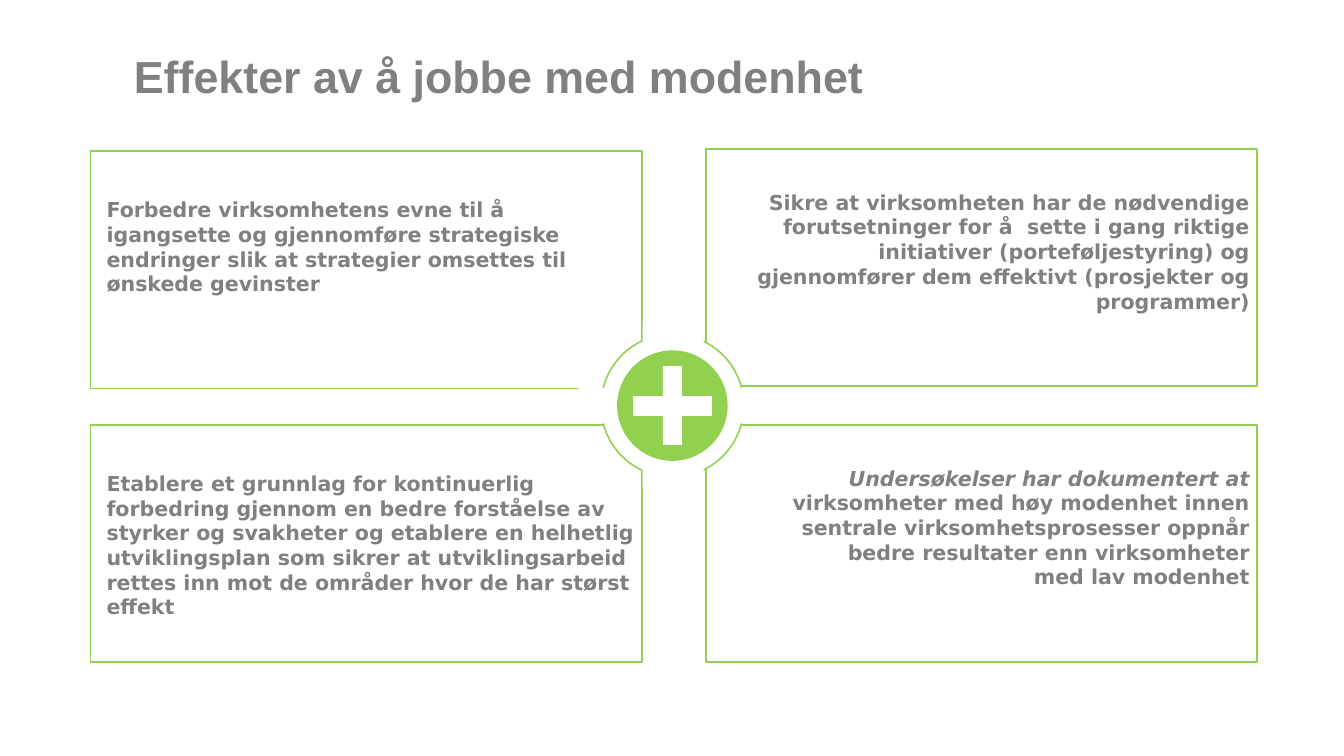
from pptx import Presentation
from pptx.dml.color import RGBColor
from pptx.enum.shapes import MSO_SHAPE
from pptx.enum.text import MSO_ANCHOR, PP_ALIGN
from pptx.util import Emu, Pt

RECT, OVAL = MSO_SHAPE.RECTANGLE, MSO_SHAPE.OVAL
LEFT, RIGHT = PP_ALIGN.LEFT, PP_ALIGN.RIGHT
TOP, BOTTOM = MSO_ANCHOR.TOP, MSO_ANCHOR.BOTTOM
SCALE = 9144  # EMU per px, 100 px to the inch
HEX = {"white": "FFFFFF", "green": "92D050", "grey": "808080"}
HEAD = {"name": "Arial", "size": Pt(42.7), "bold": True}
BODY = {"name": "DejaVu Sans", "size": Pt(19.6), "bold": True}

# Left, top, side, insets and runs of text with their italic flag
CARDS = [
    (120, 200, LEFT, (21, 61, 10, 5), [
        ("Forbedre virksomhetens evne til å igangsette og gjennomføre "
         "strategiske endringer slik at strategier omsettes til ønskede "
         "gevinster", False)]),
    (934, 197, RIGHT, (21, 54, 10, 14), [
        ("Sikre at virksomheten har de nødvendige forutsetninger for å  sette "
         "i gang riktige initiativer (porteføljestyring) og gjennomfører dem "
         "effektivt (prosjekter og programmer)", False)]),
    (120, 562, LEFT, (21, 61, 10, 5), [
        ("Etablere et grunnlag for kontinuerlig forbedring gjennom en bedre "
         "forståelse av styrker og svakheter og etablere en helhetlig "
         "utviklingsplan som sikrer at utviklingsarbeid rettes inn mot de "
         "områder hvor de har størst effekt", False)]),
    (934, 562, RIGHT, (112, 54, 10, 14), [
        ("Undersøkelser har dokumentert at", True),
        (" virksomheter med høy modenhet innen sentrale virksomhetsprosesser "
         "oppnår bedre resultater enn virksomheter med lav modenhet", False)]),
]


def px(*nums):
    return [Emu(round(num * SCALE)) for num in nums]


def tint(name):
    return RGBColor.from_string(HEX[name])


def draw(shapes, kind, box, fill, line=None, width=1.5):
    shape = shapes.add_shape(kind, *px(*box))
    shape.shadow.inherit = False
    shape.fill.solid()
    shape.fill.fore_color.rgb = tint(fill)
    if line:
        shape.line.color.rgb = tint(line)
        shape.line.width = Pt(width)
    else:
        shape.line.fill.background()
    return shape


def write(shape, runs, font, insets, anchor, para):
    """Fill a shape with one paragraph of (text, italic) runs."""
    frame = shape.text_frame
    frame.word_wrap = True
    frame.vertical_anchor = anchor
    for side, gap in zip(("left", "top", "right", "bottom"), px(*insets)):
        setattr(frame, f"margin_{side}", gap)
    first = frame.paragraphs[0]
    for key, value in para.items():
        setattr(first, key, value)
    for text, slant in runs:
        run = first.add_run()
        run.text = text
        for key, value in {**font, "italic": slant}.items():
            setattr(run.font, key, value)
        run.font.color.rgb = tint("grey")


def add_title(slide, box):
    shape = slide.shapes.add_textbox(*px(*box))
    write(shape, [("Effekter av å jobbe med modenhet", False)], HEAD,
          (0, 0, 0, 0), BOTTOM, {"alignment": LEFT, "line_spacing": 0.9})


def add_card(slide, box, side, insets, runs):
    shape = draw(slide.shapes, RECT, box, "white", "green")
    write(shape, runs, BODY, insets, TOP,
          {"alignment": side, "space_after": Pt(5.3)})


def add_plus(slide, box):
    """Ringed plus sign, with white masks that open the ring on each side."""
    left, top, wide, high = box
    mid_x, mid_y = left + wide / 2, top + high / 2
    shapes = slide.shapes.add_group_shape().shapes

    def centre(kind, w, h, *style, dx=0, dy=0):
        spot = (mid_x + dx - w / 2, mid_y + dy - h / 2, w, h)
        draw(shapes, kind, spot, *style)

    centre(OVAL, wide, high, "white", "green")
    centre(OVAL, 142, 142, "green", "green", 3)
    for w, h in ((104, 25), (25, 104)):
        centre(RECT, w, h, "white", "white", 0.75)
    for sign in (-1, 1):
        centre(RECT, 43, 47, "white", dx=sign * 102)
        centre(RECT, 81, 32, "white", dx=1, dy=sign * 95)


def main():
    deck = Presentation()
    deck.slide_width, deck.slide_height = px(1778, 1000)
    slide = deck.slides.add_slide(deck.slide_layouts[6])
    add_title(slide, (177, 60, 1401, 76))
    for left, top, side, insets, runs in CARDS:
        add_card(slide, (left, top, 729, 314), side, insets, runs)
    add_plus(slide, (795, 442, 189, 189))
    deck.save("out.pptx")


if __name__ == "__main__":
    main()
